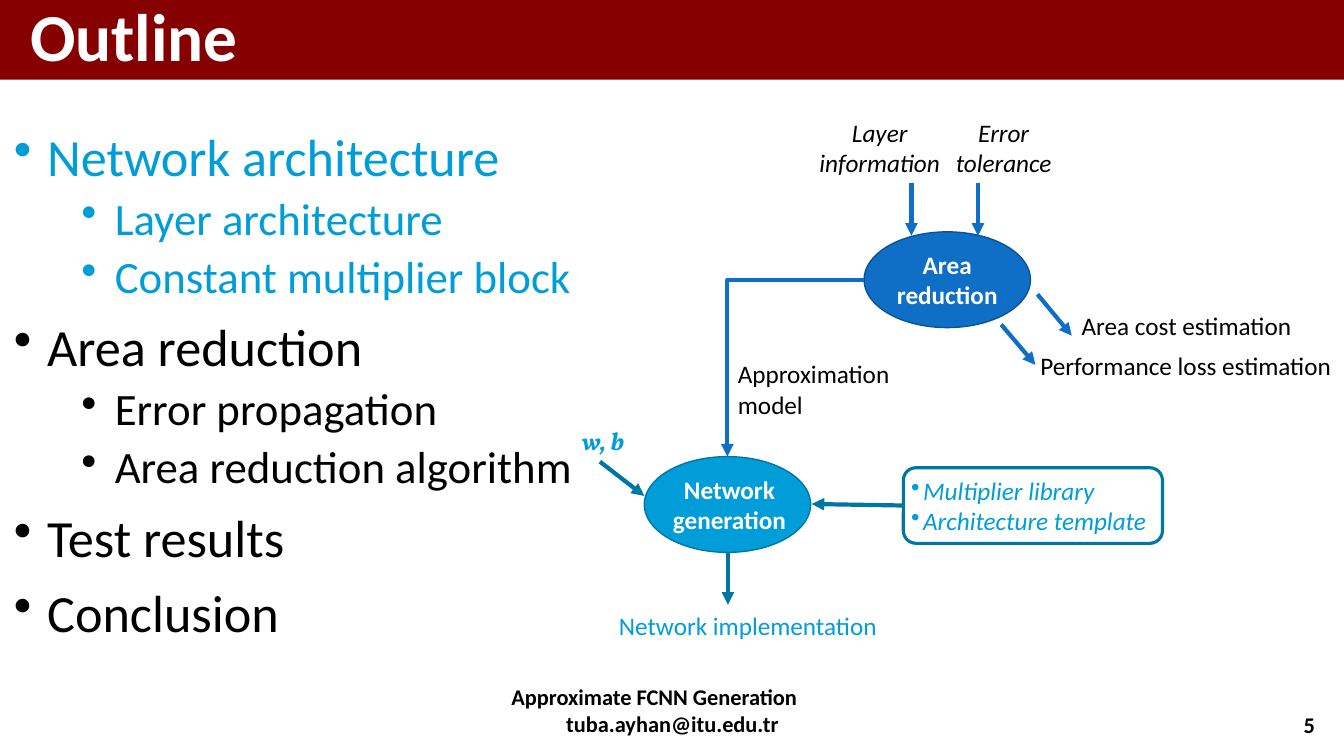
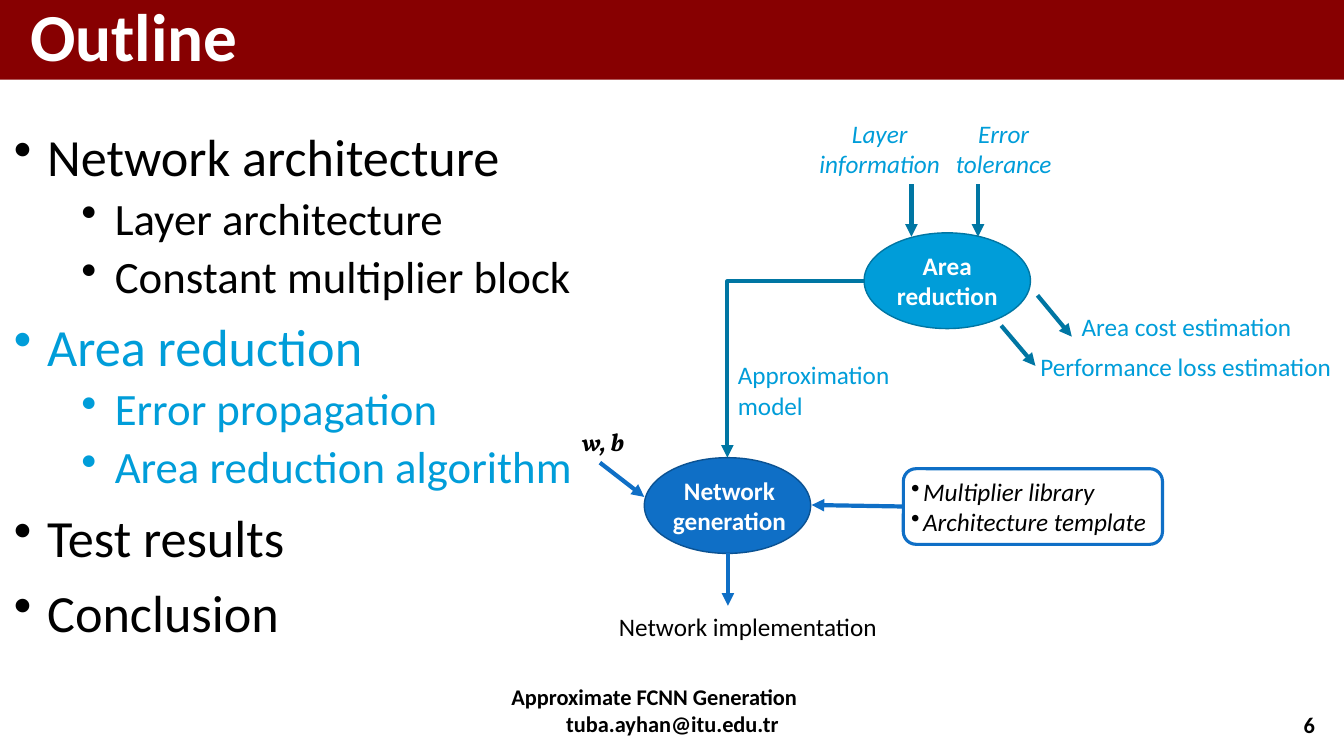
import dataclasses
import typing

import lxml.etree
import pptx
import pptx.dml.color
import pptx.enum.shapes
import pptx.enum.text
import pptx.oxml.ns
import pptx.shapes.autoshape
import pptx.shapes.connector
import pptx.slide
import pptx.text.text
import pptx.util

Inches = pptx.util.Inches
Pt = pptx.util.Pt
ShapeKind = pptx.enum.shapes.MSO_SHAPE
ConnectorKind = pptx.enum.shapes.MSO_CONNECTOR
Align = pptx.enum.text.PP_ALIGN
Anchor = pptx.enum.text.MSO_ANCHOR

COLORS = {
    "band": "870001",
    "white": "FFFFFF",
    "black": "000000",
    "blue": "0F6FC6",
    "navy": "0B5292",
    "cyan": "009DD9",
    "teal": "0076A3",
}
FONT = "Calibri"
SLIDE_WIDTH, SLIDE_HEIGHT = 13.33, 7.5
BAND_HEIGHT = 0.79
WIDE_INSETS = (0.1, 0.05, 0.1, 0.05)
NARROW_INSETS = (0.04, 0.05, 0.04, 0.05)
NODE_SIZE = (1.65, 0.95)
AREA, NETWORK = "area", "network"


@dataclasses.dataclass(frozen=True)
class TextStyle:
    size: float = 18
    color: str = "black"
    bold: bool = False
    italic: bool = False
    font: str = FONT


@dataclasses.dataclass(frozen=True)
class Palette:
    fill: str
    outline: str
    stroke: str
    text: str


@dataclasses.dataclass(frozen=True)
class Label:
    text: str
    stage: str
    left: float
    top: float
    width: float
    height: float = 0.4
    centered: bool = False
    bold: bool = False
    italic: bool = False
    font: str = FONT


@dataclasses.dataclass(frozen=True)
class Arrow:
    stage: str
    start: tuple[float, float]
    end: tuple[float, float]


@dataclasses.dataclass(frozen=True)
class OutlineItem:
    text: str
    level: int = 0
    stage: str = ""


@dataclasses.dataclass(frozen=True)
class OutlinePage:
    number: int
    active: str
    shift: float


IDLE = Palette("blue", "navy", "blue", "black")
ACTIVE = Palette("cyan", "teal", "teal", "cyan")

OUTLINE = (
    OutlineItem("Network architecture", 0, NETWORK),
    OutlineItem("Layer architecture", 1, NETWORK),
    OutlineItem("Constant multiplier block", 1, NETWORK),
    OutlineItem("Area reduction", 0, AREA),
    OutlineItem("Error propagation", 1, AREA),
    OutlineItem("Area reduction algorithm", 1, AREA),
    OutlineItem("Test results"),
    OutlineItem("Conclusion"),
)
LABELS = (
    Label("Approximation model", AREA, 7.22, 3.51, 1.74, 0.71),
    Label("Network implementation", NETWORK, 6.04, 6.01, 3.36),
    Label("Layer information", AREA, 8.05, 1.11, 1.35, 0.71, centered=True, italic=True),
    Label("Error tolerance", AREA, 9.28, 1.11, 1.35, 0.71, centered=True, italic=True),
    Label("w, b", NETWORK, 5.65, 4.17, 0.66, centered=True, bold=True, italic=True, font="Vollkorn"),
    Label("Performance loss estimation", AREA, 10.22, 3.43, 3.11),
    Label("Area cost estimation", AREA, 10.63, 3.03, 2.44),
)
ARROWS = (
    Arrow(NETWORK, (7.22, 5.48), (7.22, 6)),
    Arrow(AREA, (9.04, 1.82), (9.04, 2.34)),
    Arrow(AREA, (9.7, 1.82), (9.7, 2.34)),
    Arrow(NETWORK, (5.95, 4.58), (6.39, 4.92)),
    Arrow(AREA, (10.29, 2.92), (10.63, 3.33)),
    Arrow(AREA, (9.93, 3.22), (10.27, 3.62)),
)
PAGES = (OutlinePage(5, NETWORK, 0), OutlinePage(6, AREA, 0.01))


def rgb(name: str) -> pptx.dml.color.RGBColor:
    return pptx.dml.color.RGBColor.from_string(COLORS[name])


def add_span(para: pptx.text.text._Paragraph, text: str, style: TextStyle) -> None:
    span = para.add_run()
    span.text = text
    span.font.name = style.font
    span.font.size = Pt(style.size)
    span.font.bold = style.bold
    span.font.italic = style.italic
    span.font.color.rgb = rgb(style.color)


def indent(para: pptx.text.text._Paragraph, left: float, hanging: float = 0) -> None:
    properties = para._p.get_or_add_pPr()
    properties.set("marL", str(Inches(left)))
    properties.set("indent", str(Inches(-hanging)))
    if hanging:
        bullet = lxml.etree.SubElement(properties, pptx.oxml.ns.qn("a:buChar"))
        bullet.set("char", "•")


def set_frame(
    box: pptx.shapes.autoshape.Shape,
    anchor: Anchor,
    insets: tuple[float, float, float, float] = WIDE_INSETS,
) -> pptx.text.text.TextFrame:
    frame = box.text_frame
    frame.word_wrap = True
    frame.vertical_anchor = anchor
    frame.margin_left, frame.margin_top, frame.margin_right, frame.margin_bottom = map(Inches, insets)
    return frame


def add_text(
    page: pptx.slide.Slide,
    at: tuple[float, float, float, float],
    anchor: Anchor = Anchor.TOP,
    insets: tuple[float, float, float, float] = WIDE_INSETS,
) -> pptx.text.text.TextFrame:
    return set_frame(page.shapes.add_textbox(*map(Inches, at)), anchor, insets)


def next_para(frame: pptx.text.text.TextFrame, position: int) -> pptx.text.text._Paragraph:
    return frame.add_paragraph() if position else frame.paragraphs[0]


def add_box(
    page: pptx.slide.Slide,
    kind: ShapeKind,
    at: tuple[float, float, float, float],
    fill: str,
    line: typing.Optional[str] = None,
    width: float = 1,
) -> pptx.shapes.autoshape.Shape:
    box = page.shapes.add_shape(kind, *map(Inches, at))
    box.shadow.inherit = False
    box.fill.solid()
    box.fill.fore_color.rgb = rgb(fill)
    if line:
        box.line.color.rgb = rgb(line)
        box.line.width = Pt(width)
    else:
        box.line.fill.background()
    return box


def add_arrow(
    page: pptx.slide.Slide,
    start: tuple[float, float],
    end: tuple[float, float],
    color: str,
    kind: ConnectorKind = ConnectorKind.STRAIGHT,
) -> pptx.shapes.connector.Connector:
    arrow = page.shapes.add_connector(kind, *map(Inches, start + end))
    arrow.line.color.rgb = rgb(color)
    arrow.line.width = Pt(3)
    head = lxml.etree.SubElement(arrow.line._get_or_add_ln(), pptx.oxml.ns.qn("a:tailEnd"))
    head.set("type", "triangle")
    lxml.etree.SubElement(arrow._element.spPr, pptx.oxml.ns.qn("a:effectLst"))
    return arrow


def add_node(
    page: pptx.slide.Slide, text: str, left: float, top: float, palette: Palette, right_inset: float
) -> pptx.shapes.autoshape.Shape:
    node = add_box(page, ShapeKind.OVAL, (left, top, *NODE_SIZE), palette.fill, palette.outline)
    para = set_frame(node, Anchor.MIDDLE, (0.04, 0.05, right_inset, 0.05)).paragraphs[0]
    para.alignment = Align.CENTER
    add_span(para, text, TextStyle(color="white", bold=True))
    return node


def draw_frame(page: pptx.slide.Slide, number: int) -> None:
    add_box(page, ShapeKind.RECTANGLE, (0, 0, SLIDE_WIDTH, BAND_HEIGHT), "band")
    title = add_text(page, (0.2, 0, 12.93, BAND_HEIGHT), Anchor.MIDDLE).paragraphs[0]
    title.line_spacing = 0.9
    add_span(title, "Outline", TextStyle(48, "white", bold=True))

    style = TextStyle(16, bold=True)
    footer = add_text(page, (4.24, 6.96, 4.5, 0.4), Anchor.BOTTOM)
    for position, text in enumerate(("Approximate FCNN Generation", "tuba.ayhan@itu.edu.tr")):
        para = next_para(footer, position)
        para.alignment = Align.CENTER
        indent(para, 0.36 * position)
        add_span(para, text, style)
    corner = add_text(page, (9.71, 6.97, 3.43, 0.4), Anchor.BOTTOM).paragraphs[0]
    corner.alignment = Align.RIGHT
    add_span(corner, str(number), style)


def draw_outline(page: pptx.slide.Slide, active: str) -> None:
    frame = add_text(page, (0.04, 1.25, 5.86, 4.76))
    for position, item in enumerate(OUTLINE):
        para = next_para(frame, position)
        para.level = item.level
        para.line_spacing = 0.9
        para.space_before = Pt(6.7 if item.level else 13.3)
        indent(para, 1 if item.level else 0.33, 0.33)
        color = (ACTIVE if item.stage == active else IDLE).text
        add_span(para, item.text, TextStyle(32 if item.level else 37.3, color))


def draw_diagram(page: pptx.slide.Slide, active: str, shift: float) -> None:
    palettes = {stage: ACTIVE if stage == active else IDLE for stage in (AREA, NETWORK)}
    network = palettes[NETWORK]
    area_node = add_node(page, "Area reduction", 8.57, 2.3 + shift, palettes[AREA], 0.04)
    network_node = add_node(page, "Network generation", 6.39, 4.53 + shift, network, 0)

    start, end = (8.57, 2.78 + shift), (7.22, 4.53 + shift)
    model_arrow = add_arrow(page, start, end, palettes[AREA].stroke, ConnectorKind.ELBOW)
    model_arrow._element.spPr.prstGeom.set("prst", "bentConnector2")
    model_arrow.begin_connect(area_node, 2)
    model_arrow.end_connect(network_node, 0)
    model_arrow.begin_x, model_arrow.begin_y = map(Inches, start)

    library = add_box(
        page, ShapeKind.ROUNDED_RECTANGLE, (8.96, 4.64 + shift, 2.57, 0.75), "white", network.stroke, 2.25
    )
    frame = set_frame(library, Anchor.MIDDLE, (0.04, 0.05, 0, 0.05))
    for position, text in enumerate(("Multiplier library", "Architecture template")):
        para = next_para(frame, position)
        para.alignment = Align.LEFT
        indent(para, 0.12, 0.12)
        add_span(para, text, TextStyle(color=network.text, italic=True))
    library_arrow = add_arrow(page, (8.96, 5.01 + shift), (8.05, 5 + shift), network.stroke)
    library_arrow.begin_connect(library, 1)

    for arrow in ARROWS:
        (x1, y1), (x2, y2) = arrow.start, arrow.end
        add_arrow(page, (x1, y1 + shift), (x2, y2 + shift), palettes[arrow.stage].stroke)
    for label in LABELS:
        at = (label.left, label.top + shift, label.width, label.height)
        insets = NARROW_INSETS if label.centered else WIDE_INSETS
        para = add_text(page, at, insets=insets).paragraphs[0]
        para.alignment = Align.CENTER if label.centered else Align.LEFT
        color = palettes[label.stage].text
        add_span(para, label.text, TextStyle(18, color, label.bold, label.italic, label.font))


def main() -> None:
    deck = pptx.Presentation()
    deck.slide_width, deck.slide_height = Inches(SLIDE_WIDTH), Inches(SLIDE_HEIGHT)
    for outline_page in PAGES:
        page = deck.slides.add_slide(deck.slide_layouts[6])
        draw_frame(page, outline_page.number)
        draw_diagram(page, outline_page.active, outline_page.shift)
        draw_outline(page, outline_page.active)
    deck.save("out.pptx")


if __name__ == "__main__":
    main()
